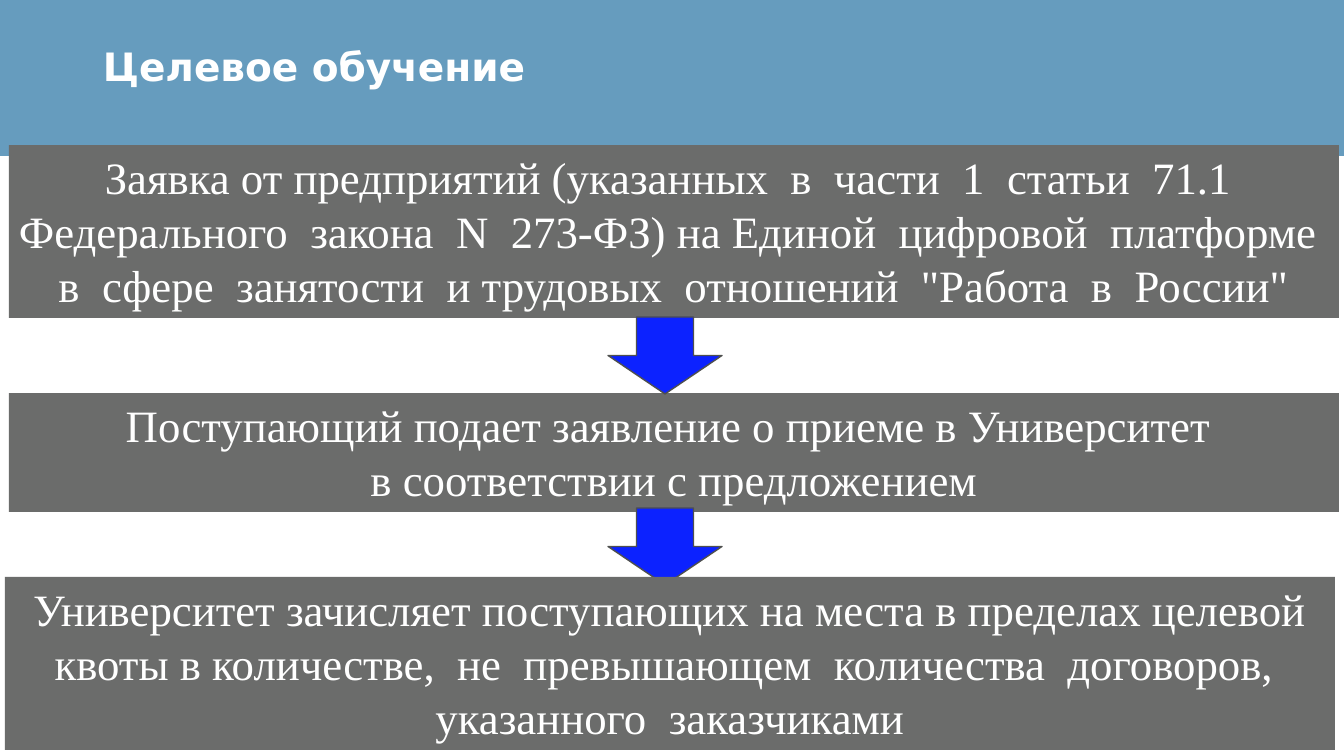
import pptx
import pptx.dml.color
import pptx.enum.shapes
import pptx.enum.text
import pptx.oxml
import pptx.oxml.ns
import pptx.util
from dataclasses import dataclass

SHAPE = pptx.enum.shapes.MSO_SHAPE
ALIGN = pptx.enum.text.PP_ALIGN
ANCHOR = pptx.enum.text.MSO_ANCHOR


def rgb(code):
    return pptx.dml.color.RGBColor.from_string(code)


@dataclass(frozen=True)
class Theme:
    band: str = "005A94"
    band_alpha: int = 60
    panel: str = "6B6C6B"
    arrow: str = "0C22FF"
    outline: str = "4F504F"
    text: str = "FFFFFF"
    title_font: str = "DejaVu Sans"
    body_font: str = "Times New Roman"
    title_size: float = 27.9
    body_size: int = 32


class Deck:
    EMU_PER_PX = 914400 / 100.8

    def __init__(self, theme, width, height):
        self.theme = theme
        self.prs = pptx.Presentation()
        self.prs.slide_width = self.px(width)
        self.prs.slide_height = self.px(height)
        self.s = self.prs.slides.add_slide(self.prs.slide_layouts[6])

    def px(self, n):
        return pptx.util.Emu(round(n * self.EMU_PER_PX))

    def shape(self, kind, box, fill, line=None):
        sp = self.s.shapes.add_shape(kind, *map(self.px, box))
        sp.shadow.inherit = False
        sp.fill.solid()
        sp.fill.fore_color.rgb = rgb(fill)
        if line:
            sp.line.color.rgb = rgb(line)
            sp.line.width = pptx.util.Pt(1)
        else:
            sp.line.fill.background()
        return sp

    def fill_text(self, sp, lines, paragraph, font):
        tf = sp.text_frame
        tf.word_wrap = True
        tf.vertical_anchor = ANCHOR.TOP
        for i, line in enumerate(lines):
            p = tf.paragraphs[0] if i == 0 else tf.add_paragraph()
            for name, value in paragraph.items():
                setattr(p, name, value)
            r = p.add_run()
            r.text = line
            r.font.color.rgb = rgb(self.theme.text)
            for name, value in font.items():
                setattr(r.font, name, value)

    def band(self, box):
        sp = self.shape(SHAPE.RECTANGLE, box, self.theme.band)
        color = sp.element.find(".//" + pptx.oxml.ns.qn("a:srgbClr"))
        alpha = pptx.oxml.parse_xml(
            f'<a:alpha {pptx.oxml.ns.nsdecls("a")} val="{self.theme.band_alpha * 1000}"/>'
        )
        color.append(alpha)

    def title(self, box, text):
        sp = self.s.shapes.add_textbox(*map(self.px, box))
        font = {
            "name": self.theme.title_font,
            "size": pptx.util.Pt(self.theme.title_size),
            "bold": True,
        }
        self.fill_text(sp, [text], {"line_spacing": 0.9}, font)

    def panel(self, box, lines):
        sp = self.shape(SHAPE.RECTANGLE, box, self.theme.panel)
        font = {
            "name": self.theme.body_font,
            "size": pptx.util.Pt(self.theme.body_size),
        }
        self.fill_text(sp, lines, {"alignment": ALIGN.CENTER}, font)

    def arrow(self, box):
        self.shape(SHAPE.DOWN_ARROW, box, self.theme.arrow, self.theme.outline)


def main():
    deck = Deck(Theme(), 1344, 756)
    deck.band((0, 0, 1344, 156))
    deck.title((93, 43, 1018, 91), "Целевое обучение")
    deck.panel((9, 145, 1330, 173), [
        "Заявка от предприятий (указанных  в  части  1  статьи  71.1 ",
        "Федерального  закона  N  273-ФЗ) на Единой  цифровой  платформе  "
        "в  сфере  занятости  и трудовых  отношений  \"Работа  в  России\"",
    ])
    deck.panel((9, 393, 1330, 119), [
        "Поступающий подает заявление о приеме в Университет ",
        "в соответствии с предложением",
    ])
    for top in (317, 508):
        deck.arrow((608, top, 114, 77))
    deck.panel((5, 577, 1330, 173), [
        "Университет зачисляет поступающих на места в пределах целевой "
        "квоты в количестве,  не  превышающем  количества  договоров,  "
        "указанного  заказчиками",
    ])
    deck.prs.save("out.pptx")


if __name__ == "__main__":
    main()
